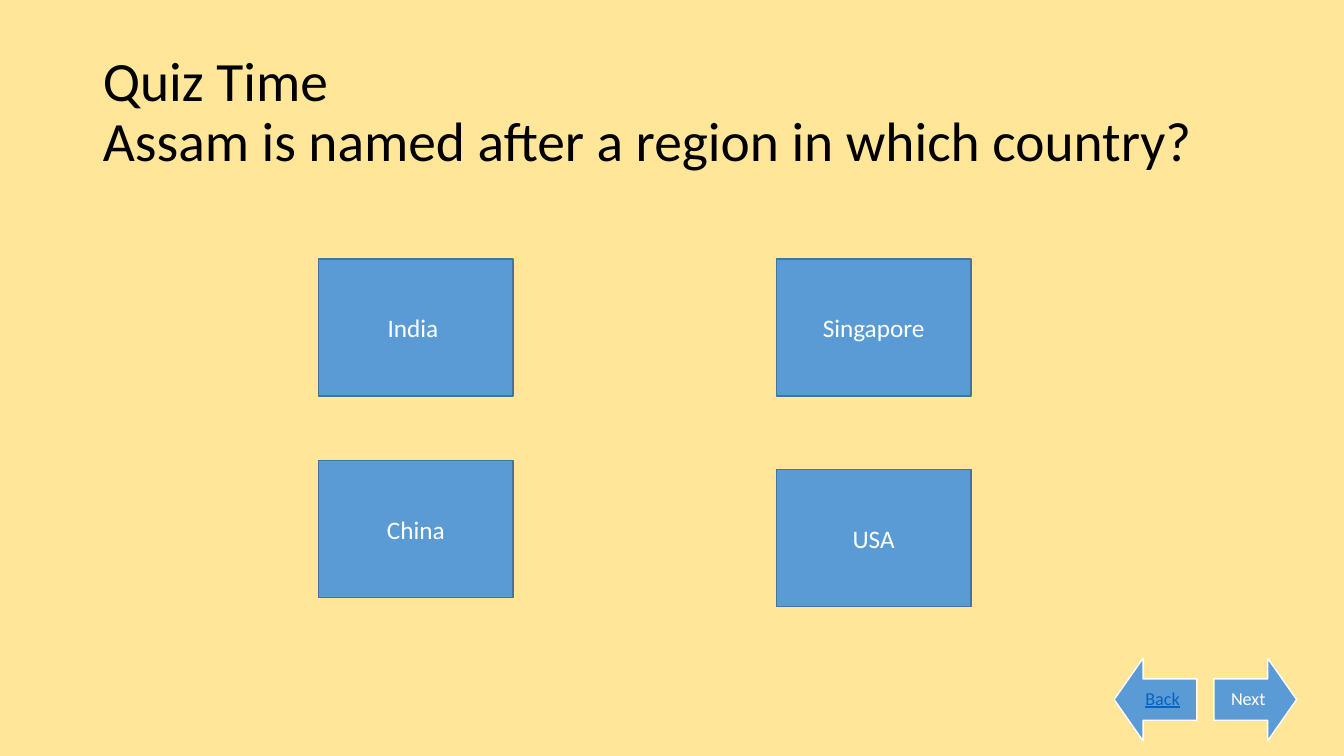
from collections import namedtuple
from dataclasses import dataclass

from pptx import Presentation
from pptx import util as u
from pptx.dml.color import RGBColor
from pptx.enum import shapes, text

Box = namedtuple("Box", "left top width height")


@dataclass(frozen=True)
class Theme:
    font: str = "Calibri"
    background: str = "FFE699"
    ink: str = "000000"
    fill: str = "5B9BD5"
    edge: str = "43739E"
    light: str = "FFFFFF"
    link: str = "0563C1"
    title_size: float = 39.6
    answer_size: float = 18
    nav_size: float = 13
    line_width: float = 1


THEME = Theme()


def inches(box):
    return [u.Inches(length) for length in box]


def write(shape, words, size, color, align, spacing=1.0):
    frame = shape.text_frame
    frame.text = words
    frame.word_wrap = True
    frame.auto_size = text.MSO_AUTO_SIZE.NONE
    frame.vertical_anchor = text.MSO_ANCHOR.MIDDLE
    para = frame.paragraphs[0]
    para.alignment = align
    para.line_spacing = spacing
    for span in para.runs:
        span.font.name = THEME.font
        span.font.size = u.Pt(size)
        span.font.color.rgb = RGBColor.from_string(color)
    return frame


def add_filled(parent, kind, box, edge):
    shape = parent.add_shape(kind, *inches(box))
    shape.shadow.inherit = False
    shape.fill.solid()
    shape.fill.fore_color.rgb = RGBColor.from_string(THEME.fill)
    shape.line.color.rgb = RGBColor.from_string(edge)
    shape.line.width = u.Pt(THEME.line_width)
    return shape


def add_title(page, box, words):
    title = page.shapes.title
    title.left, title.top, title.width, title.height = inches(box)
    write(title, words, THEME.title_size, THEME.ink, text.PP_ALIGN.LEFT, 0.9)


def add_answers(page, box, columns, card_width=1.93, card_height=1.36):
    """Place answer columns at the box's sides; each answer has its drop from the box top."""
    step = (box.width - card_width) / (len(columns) - 1)
    for index, column in enumerate(columns):
        for words, drop in column:
            place = Box(box.left + index * step, box.top + drop, card_width, card_height)
            card = add_filled(page.shapes, shapes.MSO_SHAPE.RECTANGLE, place, THEME.edge)
            write(card, words, THEME.answer_size, THEME.light, text.PP_ALIGN.CENTER)


def add_nav_arrow(page, box, words, rotation, label_shift, color, underline=False):
    group = page.shapes.add_group_shape()
    arrow = add_filled(group.shapes, shapes.MSO_SHAPE.UP_ARROW, box, THEME.light)
    arrow.rotation = rotation
    arrow.adjustments[0], arrow.adjustments[1] = 0.5, 0.35
    label_box = Box(box.left + label_shift, box.top + box.height / 4,
                    box.width - 0.14, box.height / 2)
    label = group.shapes.add_textbox(*inches(label_box))
    frame = write(label, words, THEME.nav_size, color, text.PP_ALIGN.CENTER, 0.9)
    frame.margin_left = frame.margin_right = u.Inches(0.1)
    frame.margin_top = frame.margin_bottom = u.Inches(0.1)
    frame.paragraphs[0].runs[0].font.underline = underline


def add_navigation(page, box):
    """Put the back arrow at the box's left end and the next arrow at its right end."""
    side = box.height
    back = Box(box.left, box.top, side, side)
    forward = back._replace(left=box.left + box.width - side)
    add_nav_arrow(page, back, "Back", 270, 0.14, THEME.link, True)
    add_nav_arrow(page, forward, "Next", 90, 0, THEME.light)


def build_quiz(deck):
    page = deck.slides.add_slide(deck.slide_layouts.get_by_name("Title Only"))
    page.background.fill.solid()
    page.background.fill.fore_color.rgb = RGBColor.from_string(THEME.background)
    add_title(page, Box(0.92, 0.4, 11.5, 1.45),
              "Quiz Time \vAssam is named after a region in which country?")
    add_answers(page, Box(3.16, 2.57, 6.47, 3.45), [
        [("India ", 0), ("China", 2.0)],
        [("Singapore", 0), ("USA", 2.09)],
    ])
    add_navigation(page, Box(11.05, 6.53, 1.81, 0.82))


def main():
    deck = Presentation()
    deck.slide_width, deck.slide_height = u.Inches(13.33), u.Inches(7.5)
    build_quiz(deck)
    deck.save("out.pptx")


if __name__ == "__main__":
    main()
